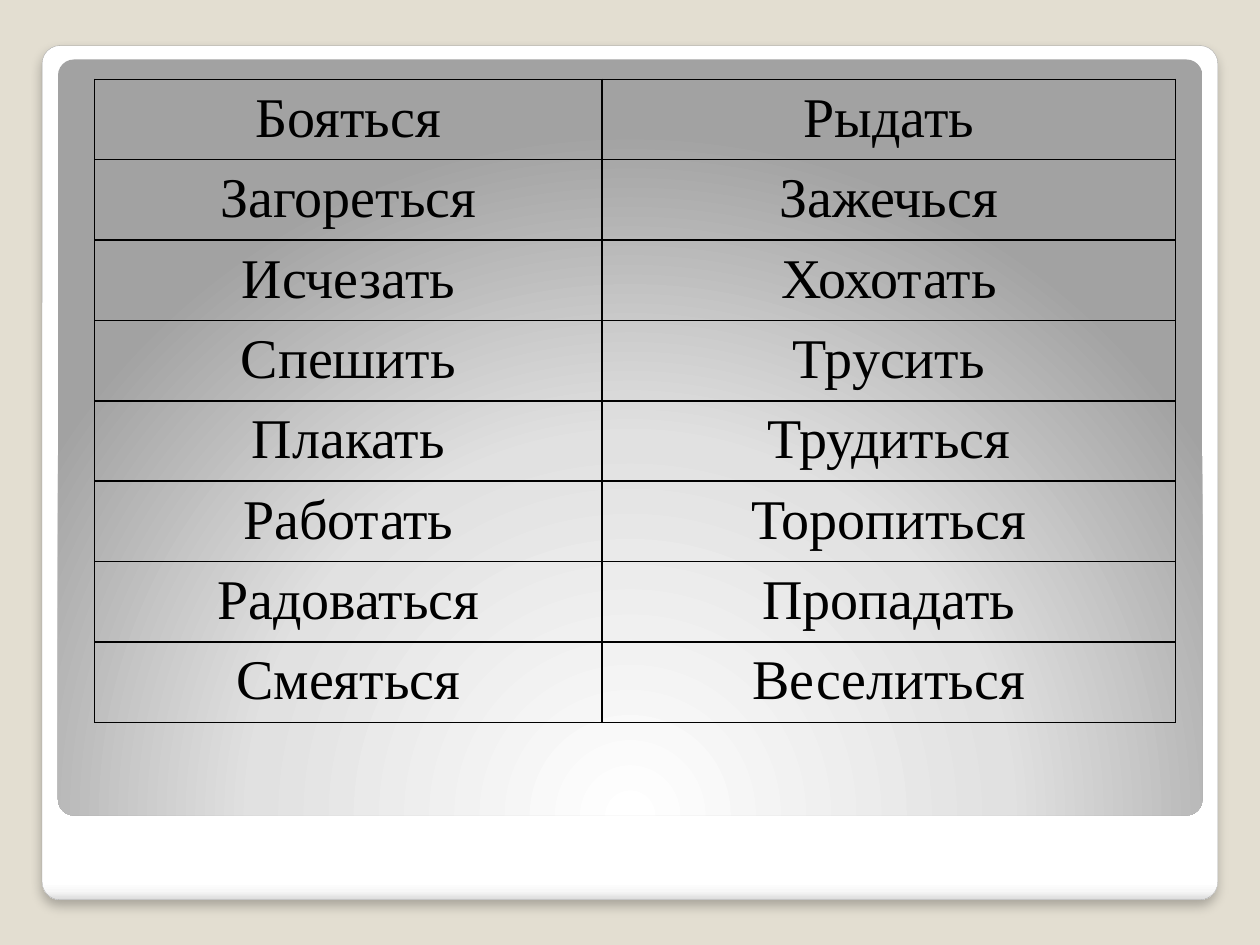
from typing import NamedTuple

from pptx import Presentation
from pptx.dml.color import RGBColor
from pptx.enum.shapes import MSO_SHAPE as Shapes
from pptx.enum.text import PP_ALIGN as Align
from pptx.oxml import parse_xml
from pptx.oxml.ns import nsdecls
from pptx.util import Cm, Pt

COLORS = {
    "background": "E3DED1",
    "outline": "A4A4A4",
    "ink": "000000",
    "white": "FFFFFF",
    "pale": "F7F7F7",
    "edge": "DADADA",
    "light": "E1E1E1",
    "gray": "A2A2A2",
}
FONT = "Times New Roman"
VERBS = [
    ("Бояться", "Рыдать"),
    ("Загореться", "Зажечься"),
    ("Исчезать", "Хохотать"),
    ("Спешить", "Трусить"),
    ("Плакать", "Трудиться"),
    ("Работать", "Торопиться"),
    ("Радоваться", "Пропадать"),
    ("Смеяться", "Веселиться"),
]
COLUMN_WIDTHS = (10.23, 11.56)
ROW_HEIGHT = 1.62

LINEAR = '<a:lin ang="5400000" scaled="0"/>'
RADIAL = ('<a:path path="circle"><a:fillToRect l="50000" t="175000" '
          'r="50000" b="-75000"/></a:path>')
SHADOW = (f'<a:effectLst {nsdecls("a")}><a:outerShdw blurRad="{Pt(6)}" '
          f'dist="{Pt(4)}" dir="5400000" algn="t" rotWithShape="0">'
          f'<a:srgbClr val="{COLORS["ink"]}"><a:alpha val="25000"/></a:srgbClr>'
          '</a:outerShdw></a:effectLst>')


class Panel(NamedTuple):
    left: float
    top: float
    width: float
    height: float
    stops: tuple
    direction: str
    framed: bool


PANELS = [
    Panel(0.85, 0.92, 23.7, 17.22,
          ((0, "white"), (98, "white"), (99, "pale"), (100, "edge")), LINEAR, True),
    Panel(1.17, 1.2, 23.07, 15.24,
          ((0, "white"), (55, "light"), (100, "gray")), RADIAL, False),
]


def color(name: str) -> RGBColor:
    return RGBColor.from_string(COLORS[name])


def draw_panel(slide, panel: Panel) -> None:
    shape = slide.shapes.add_shape(
        Shapes.ROUNDED_RECTANGLE, Cm(panel.left), Cm(panel.top),
        Cm(panel.width), Cm(panel.height))
    shape.adjustments[0] = 0.021
    shape.shadow.inherit = False
    properties = shape._element.spPr

    # Gradient fill
    shape.fill.gradient()
    stops = "".join(
        f'<a:gs pos="{position * 1000}"><a:srgbClr val="{COLORS[name]}"/></a:gs>'
        for position, name in panel.stops)
    gradient = parse_xml(f'<a:gradFill {nsdecls("a")} rotWithShape="1">'
                         f'<a:gsLst>{stops}</a:gsLst>{panel.direction}</a:gradFill>')
    properties.replace(properties.gradFill, gradient)

    # Outline and shadow
    if panel.framed:
        shape.line.color.rgb = color("outline")
        shape.line.width = Pt(0.16)
        properties.replace(properties[-1], parse_xml(SHADOW))
    else:
        shape.line.fill.background()


def add_borders(cell) -> None:
    properties = cell._tc.get_or_add_tcPr()
    for index, side in enumerate(("lnL", "lnR", "lnT", "lnB")):
        properties.insert(index, parse_xml(
            f'<a:{side} {nsdecls("a")} w="{Pt(1)}"><a:solidFill>'
            f'<a:srgbClr val="{COLORS["ink"]}"/></a:solidFill></a:{side}>'))


def fill_cell(cell, text: str) -> None:
    cell.fill.background()
    add_borders(cell)
    cell.margin_left = cell.margin_right = Cm(0.18)
    cell.margin_top = cell.margin_bottom = Cm(0.16)
    cell.text_frame.text = text
    paragraph = cell.text_frame.paragraphs[0]
    paragraph.alignment = Align.CENTER
    font = paragraph.runs[0].font
    font.name, font.size, font.bold = FONT, Pt(32), False
    font.color.rgb = color("ink")


def draw_verb_table(slide) -> None:
    table = slide.shapes.add_table(
        len(VERBS), len(COLUMN_WIDTHS), Cm(1.91), Cm(1.6),
        Cm(sum(COLUMN_WIDTHS)), Cm(ROW_HEIGHT * len(VERBS))).table
    table.first_row = table.horz_banding = False
    for column, width in zip(table.columns, COLUMN_WIDTHS):
        column.width = Cm(width)
    for row, verbs in zip(table.rows, VERBS):
        row.height = Cm(ROW_HEIGHT)
        for cell, verb in zip(row.cells, verbs):
            fill_cell(cell, verb)


def main() -> None:
    presentation = Presentation()
    presentation.slide_width, presentation.slide_height = Cm(25.4), Cm(19.05)
    slide = presentation.slides.add_slide(presentation.slide_layouts[6])
    slide.background.fill.solid()
    slide.background.fill.fore_color.rgb = color("background")

    # Backdrop panels, then the word table
    for panel in PANELS:
        draw_panel(slide, panel)
    draw_verb_table(slide)
    presentation.save("out.pptx")


if __name__ == "__main__":
    main()
